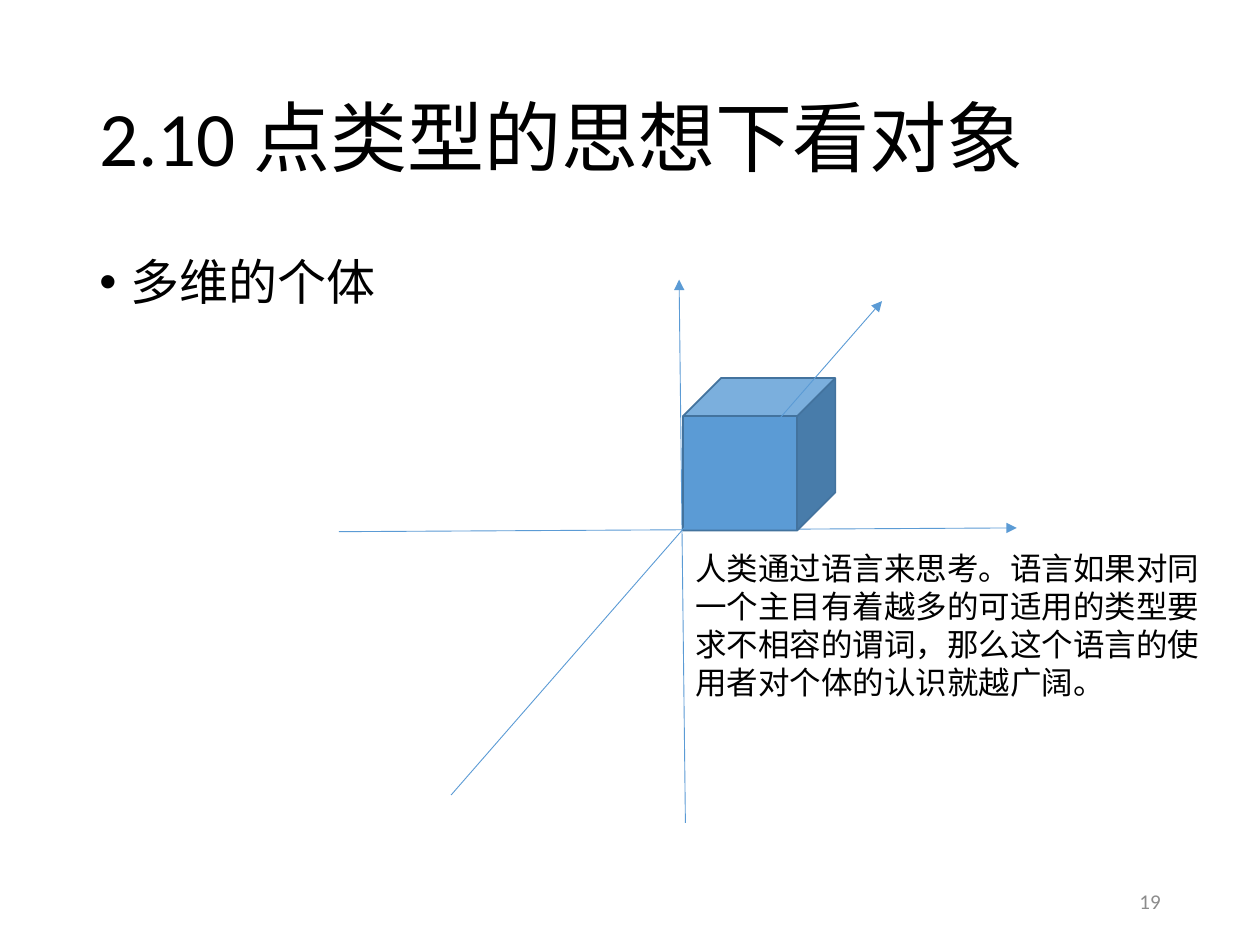
from lxml import etree
from pptx import Presentation
from pptx.dml.color import RGBColor
from pptx.enum.shapes import MSO_CONNECTOR, MSO_SHAPE
from pptx.enum.text import MSO_ANCHOR, PP_ALIGN
from pptx.oxml.ns import qn
from pptx.util import Inches, Pt

COLORS = {"text": "000000", "axis": "5B9BD5", "edge": "43739E", "number": "8C8C8C"}
FONT = "Calibri"


def rgb(name):
    return RGBColor.from_string(COLORS[name])


def write_text(tf, text, size, color="text", align=PP_ALIGN.LEFT, spacing=None, bullet=None):
    p = tf.paragraphs[0]
    p.alignment = align
    if spacing:
        p.line_spacing = spacing
    if bullet:
        pPr = p._p.get_or_add_pPr()
        pPr.set("marL", str(Inches(0.25)))
        pPr.set("indent", str(Inches(-0.25)))
        etree.SubElement(pPr, qn("a:buFont"), typeface="Arial")
        etree.SubElement(pPr, qn("a:buChar"), char=bullet)
    r = p.add_run()
    r.text = text
    r.font.name = FONT
    r.font.size = Pt(size)
    r.font.color.rgb = rgb(color)


class SlideBuilder:
    def __init__(self, slide):
        self.s = slide

    def text(self, box, text, size, anchor=MSO_ANCHOR.TOP, **fmt):
        sp = self.s.shapes.add_textbox(*map(Inches, box))
        tf = sp.text_frame
        tf.word_wrap = True
        tf.vertical_anchor = anchor
        write_text(tf, text, size, **fmt)

    def arrow(self, start, end):
        sp = self.s.shapes.add_connector(
            MSO_CONNECTOR.STRAIGHT, *map(Inches, (*start, *end)))
        sp.line.color.rgb = rgb("axis")
        sp.line.width = Pt(0.5)
        etree.SubElement(sp.line._get_or_add_ln(), qn("a:tailEnd"), type="triangle")
        etree.SubElement(sp._element.spPr, qn("a:effectLst"))

    def cube(self, left, top, side):
        sp = self.s.shapes.add_shape(
            MSO_SHAPE.CUBE, *map(Inches, (left, top, side, side)))
        sp.shadow.inherit = False
        sp.fill.solid()
        sp.fill.fore_color.rgb = rgb("axis")
        sp.line.color.rgb = rgb("edge")
        sp.line.width = Pt(1)


def main():
    prs = Presentation()
    prs.slide_width, prs.slide_height = Inches(10), Inches(7.5)
    b = SlideBuilder(prs.slides.add_slide(prs.slide_layouts[6]))

    # Title and bullet
    b.text((0.69, 0.4, 8.62, 1.45), "2.10 点类型的思想下看对象", 44,
           anchor=MSO_ANCHOR.MIDDLE, spacing=0.9)
    b.text((0.69, 2, 8.62, 4.76), "多维的个体", 28, spacing=0.9, bullet="•")

    # Axes, with the depth axis in front of the cube
    b.arrow((2.69, 4.22), (8.07, 4.19))
    b.arrow((5.44, 6.53), (5.39, 2.22))
    b.cube(5.42, 3, 1.21)
    b.arrow((3.58, 6.31), (7, 2.39))

    # Explanation
    b.text((5.42, 4.31, 4.21, 1.62),
           "人类通过语言来思考。语言如果对同一个主目有着越多的可适用的类型要求不相容的谓词，"
           "那么这个语言的使用者对个体的认识就越广阔。", 18)

    # Slide number
    b.text((7.06, 6.95, 2.25, 0.4), "19", 12, anchor=MSO_ANCHOR.MIDDLE,
           color="number", align=PP_ALIGN.RIGHT)

    prs.save("out.pptx")


if __name__ == "__main__":
    main()
